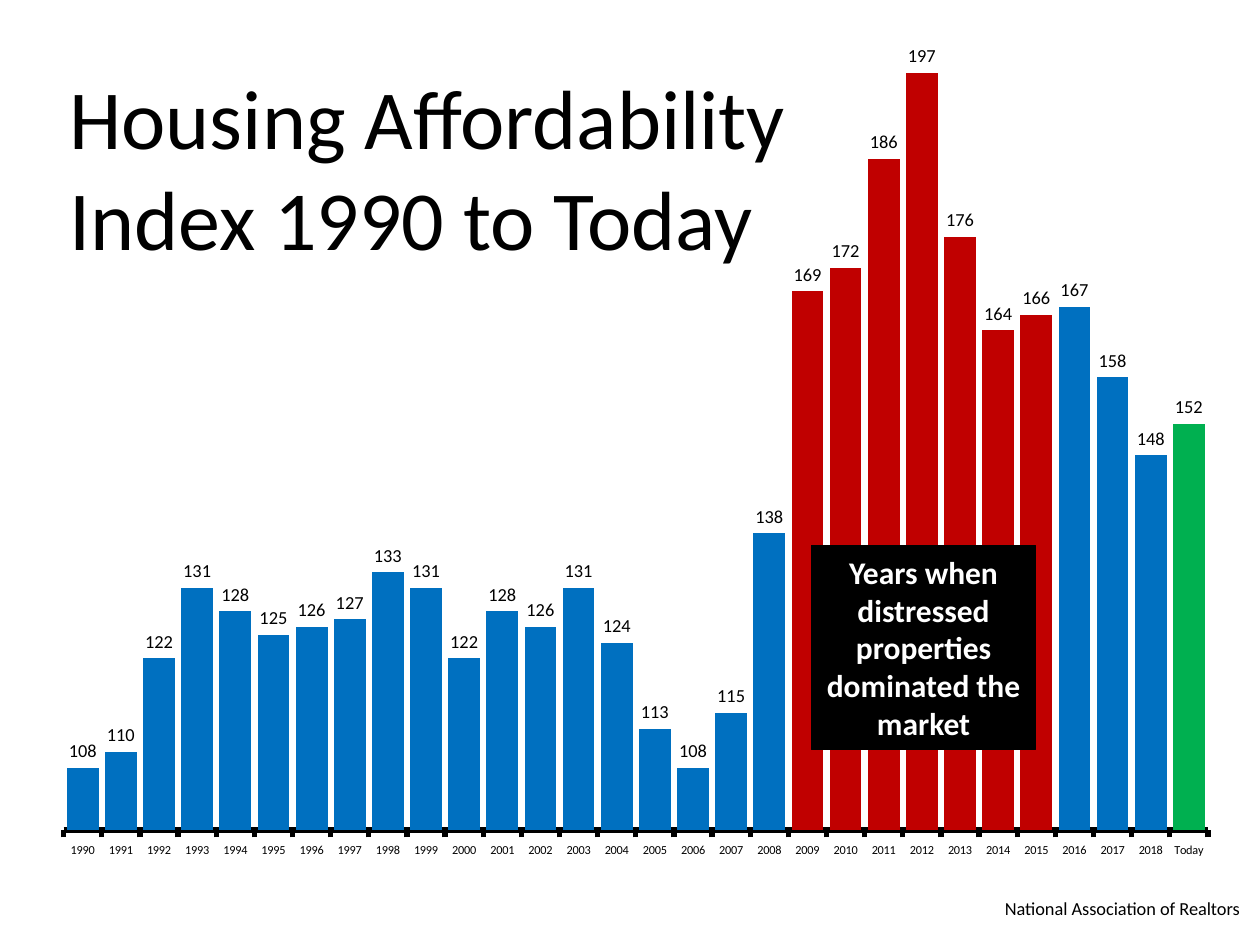
import pptx
import pptx.chart.data
import pptx.dml.color
import pptx.enum.chart
import pptx.enum.shapes
import pptx.enum.text
import pptx.oxml
import pptx.oxml.ns
import pptx.util

WIDE, HIGH = 10, 7.5
FONT = "Calibri"
BLACK, WHITE = "000000", "FFFFFF"
BLUE, RED, GREEN = "0070C0", "C00000", "00B050"
ALIGN = pptx.enum.text.PP_ALIGN

YEARS = [str(year) for year in range(1990, 2019)] + ["Today"]
INDEX = [108, 110, 122, 131, 128, 125, 126, 127, 133, 131,
         122, 128, 126, 131, 124, 113, 108, 115, 138, 169,
         172, 186, 197, 176, 164, 166, 167, 158, 148, 152]
# Bars that differ from the blue series colour
MARKS = {str(year): RED for year in range(2009, 2016)} | {"Today": GREEN}
# Inner plot area as shares of the chart
PLOT = {"x": 0.03, "y": 0.019, "w": 0.954, "h": 0.91}


def rgb(code):
    return pptx.dml.color.RGBColor.from_string(code)


def place(left, top, width, height):
    """Turn shares of the slide into lengths."""
    inch = pptx.util.Inches
    return (inch(left * WIDE), inch(top * HIGH),
            inch(width * WIDE), inch(height * HIGH))


def style(font, size, color=BLACK, bold=False):
    font.name, font.size, font.bold = FONT, pptx.util.Pt(size), bold
    font.color.rgb = rgb(color)


def paint(part, color):
    part.format.fill.solid()
    part.format.fill.fore_color.rgb = rgb(color)


def write(shape, lines, size, align, color=BLACK, bold=False, wrap=True):
    frame = shape.text_frame
    frame.word_wrap = wrap
    frame.auto_size = pptx.enum.text.MSO_AUTO_SIZE.NONE
    for num, line in enumerate(lines):
        para = frame.add_paragraph() if num else frame.paragraphs[0]
        para.alignment = align
        run = para.add_run()
        run.text = line
        style(run.font, size, color, bold)


def set_plot(chart):
    """Fix the inner plot area by hand."""
    area = chart.element.find(".//" + pptx.oxml.ns.qn("c:plotArea"))
    for old in area.findall(pptx.oxml.ns.qn("c:layout")):
        area.remove(old)
    parts = '<c:layoutTarget val="inner"/><c:xMode val="edge"/><c:yMode val="edge"/>'
    parts += "".join(f'<c:{key} val="{share}"/>' for key, share in PLOT.items())
    area.insert(0, pptx.oxml.parse_xml(
        f'<c:layout {pptx.oxml.ns.nsdecls("c")}>'
        f"<c:manualLayout>{parts}</c:manualLayout></c:layout>"))


def add_bars(slide):
    kinds = pptx.enum.chart
    data = pptx.chart.data.CategoryChartData()
    data.categories = YEARS
    data.add_series("Series 1", INDEX)
    chart = slide.shapes.add_chart(
        kinds.XL_CHART_TYPE.COLUMN_CLUSTERED,
        *place(0.022, 0.035, 0.952, 0.908), data).chart
    chart.has_legend = chart.has_title = False
    style(chart.font, 18)
    set_plot(chart)

    # Axes
    base = chart.category_axis
    base.major_tick_mark = kinds.XL_TICK_MARK.OUTSIDE
    base.format.line.color.rgb = rgb(BLACK)
    base.format.line.width = pptx.util.Pt(3)
    style(base.tick_labels.font, 7)
    scale = chart.value_axis
    scale.minimum_scale, scale.maximum_scale = 100, 200
    scale.has_major_gridlines = scale.visible = False

    # Bars and their values
    plot = chart.plots[0]
    plot.gap_width = 20
    plot.vary_by_categories = False
    bars = plot.series[0]
    bars.invert_if_negative = False
    paint(bars, BLUE)
    for year, color in MARKS.items():
        paint(bars.points[YEARS.index(year)], color)
    tags = bars.data_labels
    tags.show_value = True
    tags.position = kinds.XL_LABEL_POSITION.OUTSIDE_END
    style(tags.font, 10.5)


def set_title(slide, lines):
    title = slide.shapes.title
    title.left, title.top, title.width, title.height = place(
        0.045, 0.063, 0.653, 0.229)
    title.text_frame.vertical_anchor = pptx.enum.text.MSO_ANCHOR.TOP
    write(title, lines, 48, ALIGN.LEFT)
    # Bring the title in front of the chart
    title.element.getparent().append(title.element)


def add_note(slide, text):
    box = slide.shapes.add_shape(
        pptx.enum.shapes.MSO_SHAPE.RECTANGLE, *place(0.644, 0.577, 0.178, 0.216))
    box.shadow.inherit = False
    box.fill.solid()
    box.fill.fore_color.rgb = rgb(BLACK)
    box.line.color.rgb = rgb(BLACK)
    box.line.width = pptx.util.Pt(0.75)
    box.text_frame.vertical_anchor = pptx.enum.text.MSO_ANCHOR.MIDDLE
    write(box, [text], 18, ALIGN.CENTER, WHITE, bold=True)


def add_credit(slide, text):
    box = slide.shapes.add_textbox(*place(0.784, 0.943, 0.21, 0.037))
    write(box, [text], 10.5, ALIGN.RIGHT, wrap=False)


def main():
    deck = pptx.Presentation()
    deck.slide_width = pptx.util.Inches(WIDE)
    deck.slide_height = pptx.util.Inches(HIGH)
    slide = deck.slides.add_slide(deck.slide_layouts.get_by_name("Title Only"))
    add_bars(slide)
    set_title(slide, ["Housing Affordability", "Index 1990 to Today"])
    add_note(slide, "Years when distressed properties dominated the market")
    add_credit(slide, "National Association of Realtors")
    deck.save("out.pptx")


if __name__ == "__main__":
    main()
